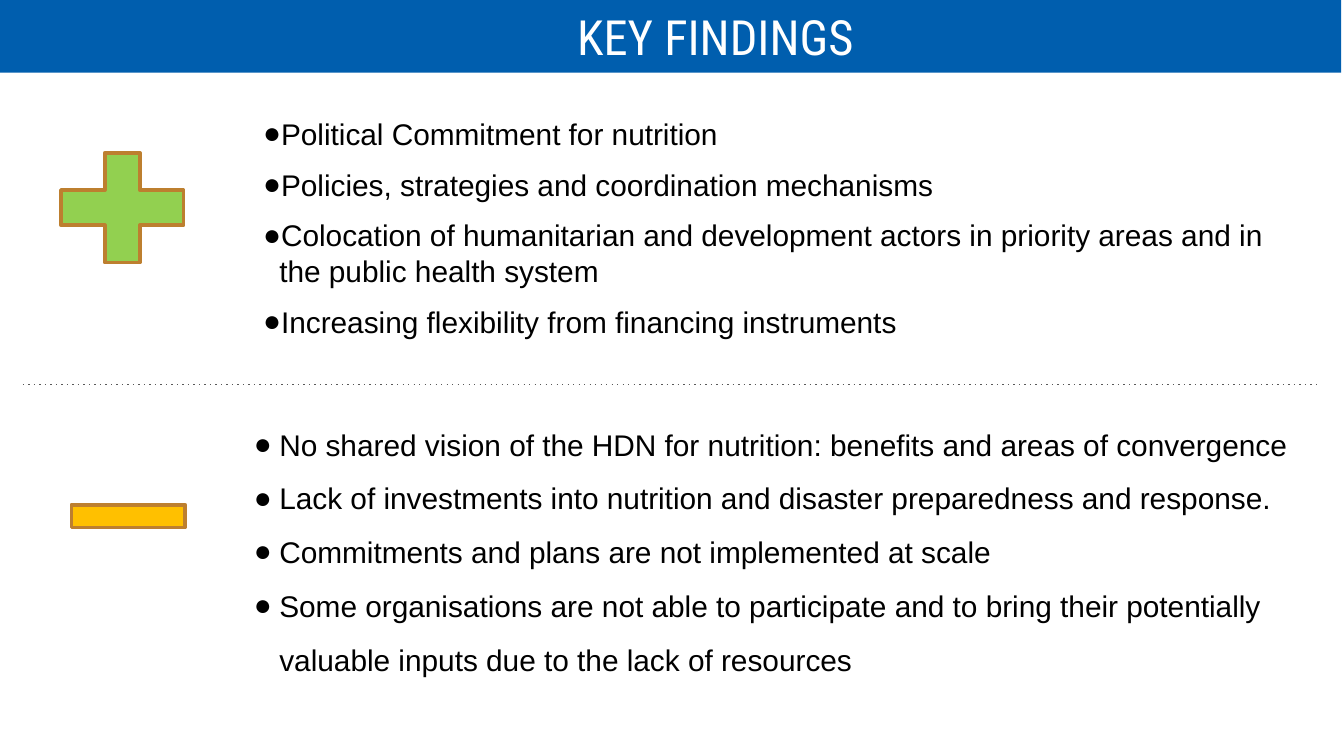
import lxml.etree
import pptx
import pptx.dml.color
import pptx.enum.shapes
import pptx.enum.text
import pptx.oxml.ns
import pptx.util

EMU_PER_PX = 4572
SHAPES = pptx.enum.shapes.MSO_SHAPE


def px(length):
    return pptx.util.Emu(length * EMU_PER_PX)


def color(hex_string):
    return pptx.dml.color.RGBColor.from_string(hex_string)


def add_child(parent, tag, **attributes):
    return lxml.etree.SubElement(parent, pptx.oxml.ns.qn(tag), attributes)


class FindingsSlide:
    BLUE = "005EAE"
    WHITE = "FFFFFF"
    BLACK = "000000"
    DIVIDER = "595959"
    OUTLINE = "BD7F2F"
    TITLE_FONT = "Roboto Condensed"
    BODY_FONT = "Arial"
    TITLE_SIZE = 26
    BODY_SIZE = 16

    def __init__(self, presentation):
        self.slide = presentation.slides.add_slide(presentation.slide_layouts[5])

    def format_runs(self, paragraph, font, size, hex_string):
        for run in paragraph.runs:
            run.font.name = font
            run.font.size = pptx.util.Pt(size)
            run.font.color.rgb = color(hex_string)

    def set_margins(self, frame, side, vertical):
        frame.margin_left = frame.margin_right = px(side)
        frame.margin_top = frame.margin_bottom = px(vertical)
        frame.word_wrap = True
        frame.auto_size = pptx.enum.text.MSO_AUTO_SIZE.NONE

    def title(self, text, left, top, width, height, indent):
        banner = self.slide.shapes.title
        banner.left, banner.top = px(left), px(top)
        banner.width, banner.height = px(width), px(height)
        banner.fill.solid()
        banner.fill.fore_color.rgb = color(self.BLUE)
        frame = banner.text_frame
        frame.text = text
        self.set_margins(frame, 20, 20)
        frame.vertical_anchor = pptx.enum.text.MSO_ANCHOR.MIDDLE
        heading = frame.paragraphs[0]
        heading.alignment = pptx.enum.text.PP_ALIGN.CENTER
        heading._p.get_or_add_pPr().set("marL", str(px(indent)))
        self.format_runs(heading, self.TITLE_FONT, self.TITLE_SIZE, self.WHITE)

    def bullets(self, findings, left, top, width, height, indent, hanging,
                vertical_margin, line_spacing=1.0, gap=0):
        box = self.slide.shapes.add_textbox(px(left), px(top), px(width), px(height))
        frame = box.text_frame
        frame.text = "\n".join(findings)
        self.set_margins(frame, 20, vertical_margin)
        for index, finding in enumerate(frame.paragraphs):
            finding.line_spacing = line_spacing
            finding.space_before = pptx.util.Pt(gap if index else 0)
            self.format_runs(finding, self.BODY_FONT, self.BODY_SIZE, self.BLACK)
            properties = finding._p.get_or_add_pPr()
            properties.set("marL", str(px(indent)))
            properties.set("indent", str(px(-hanging)))
            bullet_color = add_child(properties, "a:buClr")
            add_child(bullet_color, "a:srgbClr", val=self.BLACK)
            add_child(properties, "a:buFont", typeface=self.BODY_FONT)
            add_child(properties, "a:buChar", char="●")

    def sign(self, preset, fill, left, top, width, height):
        symbol = self.slide.shapes.add_shape(
            preset, px(left), px(top), px(width), px(height))
        symbol.shadow.inherit = False
        symbol.fill.solid()
        symbol.fill.fore_color.rgb = color(fill)
        symbol.line.color.rgb = color(self.OUTLINE)
        symbol.line.width = pptx.util.Pt(2)

    def divider(self, left, right, y):
        rule = self.slide.shapes.add_connector(
            pptx.enum.shapes.MSO_CONNECTOR.STRAIGHT, px(left), px(y), px(right), px(y))
        rule.line.color.rgb = color(self.DIVIDER)
        rule.line.width = pptx.util.Pt(0.75)
        add_child(rule._element.spPr.find(pptx.oxml.ns.qn("a:ln")), "a:prstDash", val="dot")
        add_child(rule._element.spPr, "a:effectLst")


def main():
    presentation = pptx.Presentation()
    presentation.slide_width = px(2000)
    presentation.slide_height = px(1125)

    strengths = [
        "Political Commitment for nutrition",
        "Policies, strategies and coordination mechanisms",
        "Colocation of humanitarian and development actors in priority areas "
        "and in the public health system",
        "Increasing flexibility from financing instruments",
    ]
    weaknesses = [
        "No shared vision of the HDN for nutrition: benefits and areas of convergence",
        "Lack of investments into nutrition and disaster preparedness and response.",
        "Commitments and plans are not implemented at scale",
        "Some organisations are not able to participate and to bring their "
        "potentially valuable inputs due to the lack of resources",
    ]

    page = FindingsSlide(presentation)
    page.title("KEY FINDINGS", -4, 0, 2000, 108, indent=138)
    page.bullets(weaknesses, 358, 598, 1594, 430, indent=38, hanging=44,
                 vertical_margin=10, line_spacing=1.5)
    page.divider(34, 1966, 572)
    page.bullets(strengths, 372, 152, 1566, 410, indent=24, hanging=52,
                 vertical_margin=20, gap=8)
    page.sign(SHAPES.MATH_PLUS, "92D050", 58, 198, 248, 222)
    page.sign(SHAPES.MATH_MINUS, "FFC000", 76, 696, 230, 144)

    presentation.save("out.pptx")


if __name__ == "__main__":
    main()
